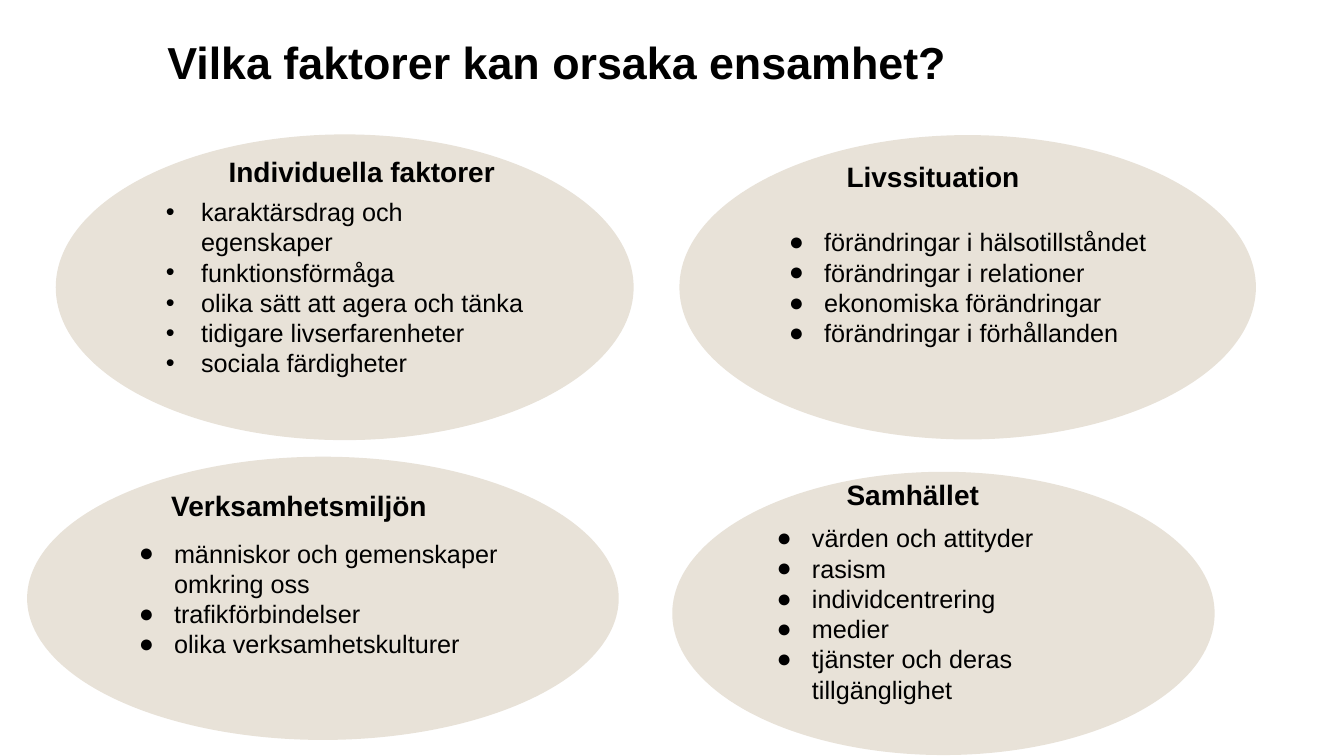
import pptx
import pptx.util
import pptx.dml.color
import pptx.enum.shapes
import pptx.enum.text
import pptx.oxml
import pptx.oxml.ns

Pt = pptx.util.Pt
ANCHOR = pptx.enum.text.MSO_ANCHOR
ALIGN = pptx.enum.text.PP_ALIGN
AUTO = pptx.enum.text.MSO_AUTO_SIZE

TITLE = {"name": "Arial", "size": Pt(32), "bold": True}
HEADING = {"name": "Arial", "size": Pt(20), "bold": True}
BODY = {"name": "Arial", "size": Pt(18), "bold": False}

FACTORS = [
    ("Individuella faktorer", (156.2, 106.6, 211, 31.7),
     (40.3, 96.5, 411.8, 217.4), "•", 1,
     ["karaktärsdrag och egenskaper", "funktionsförmåga",
      "olika sätt att agera och tänka", "tidigare livserfarenheter",
      "sociala färdigheter"]),
    ("Livssituation", (597.6, 110.2, 162.7, 31.7),
     (485.3, 96.5, 411.8, 217.4), "●", 0,
     ["förändringar i hälsotillståndet", "förändringar i relationer",
      "ekonomiska förändringar", "förändringar i förhållanden"]),
    ("Verksamhetsmiljön", (115.2, 345.6, 205.2, 31.7),
     (19.4, 326.2, 422.6, 202.3), "●", 0,
     ["människor och gemenskaper omkring oss", "trafikförbindelser",
      "olika verksamhetskulturer"]),
    ("Samhället", (597.6, 337.7, 205.2, 31.7),
     (480.2, 337, 387.4, 202.3), "●", 0,
     ["värden och attityder", "rasism", "individcentrering", "medier",
      "tjänster och deras tillgänglighet"]),
]


def rgb(value):
    return pptx.dml.color.RGBColor.from_string(value)


def set_attrs(obj, values):
    for name, value in values.items():
        setattr(obj, name, value)


def add_text(p, text, font):
    p.alignment = ALIGN.LEFT
    r = p.add_run()
    r.text = text
    set_attrs(r.font, font)
    r.font.color.rgb = rgb("000000")


def set_bullet(p, char):
    pPr = p._p.get_or_add_pPr()
    pPr.set("marL", str(Pt(36)))
    pPr.set("indent", str(-Pt(25.2)))
    for tag, key, value in (("a:buFont", "typeface", "Arial"),
                            ("a:buChar", "char", char)):
        el = pptx.oxml.parse_xml(f'<{tag} {pptx.oxml.ns.nsdecls("a")}/>')
        el.set(key, value)
        pPr.append(el)


def add_title(s, text):
    sp = s.shapes.title
    set_attrs(sp, {"left": Pt(112.3), "top": Pt(25.2),
                   "width": Pt(828), "height": Pt(61.2)})
    tf = sp.text_frame
    set_attrs(tf, {"vertical_anchor": ANCHOR.TOP, "word_wrap": True,
                   "auto_size": AUTO.NONE})
    p = tf.paragraphs[0]
    p.line_spacing = 0.9
    add_text(p, text, TITLE)


def add_ellipse(s, box, items, char, outline):
    sp = s.shapes.add_shape(pptx.enum.shapes.MSO_SHAPE.OVAL, *map(Pt, box))
    sp.shadow.inherit = False
    sp.fill.solid()
    sp.fill.fore_color.rgb = rgb("E8E2D8")
    if outline:
        sp.line.color.rgb = rgb("E8E2D8")
        sp.line.width = Pt(outline)
    else:
        sp.line.fill.background()
    tf = sp.text_frame
    set_attrs(tf, {"word_wrap": True, "vertical_anchor": ANCHOR.MIDDLE})
    for i, item in enumerate(items):
        p = tf.add_paragraph() if i else tf.paragraphs[0]
        set_bullet(p, char)
        add_text(p, item, BODY)


def add_heading(s, box, text):
    tf = s.shapes.add_textbox(*map(Pt, box)).text_frame
    set_attrs(tf, {"word_wrap": True, "auto_size": AUTO.SHAPE_TO_FIT_TEXT})
    add_text(tf.paragraphs[0], text, HEADING)


def main():
    prs = pptx.Presentation()
    set_attrs(prs, {"slide_width": Pt(960), "slide_height": Pt(540)})
    s = prs.slides.add_slide(prs.slide_layouts[5])
    add_title(s, "Vilka faktorer kan orsaka ensamhet?")
    for heading, heading_box, ellipse_box, char, outline, items in FACTORS:
        add_ellipse(s, ellipse_box, items, char, outline)
        add_heading(s, heading_box, heading)
    prs.save("out.pptx")


if __name__ == "__main__":
    main()
